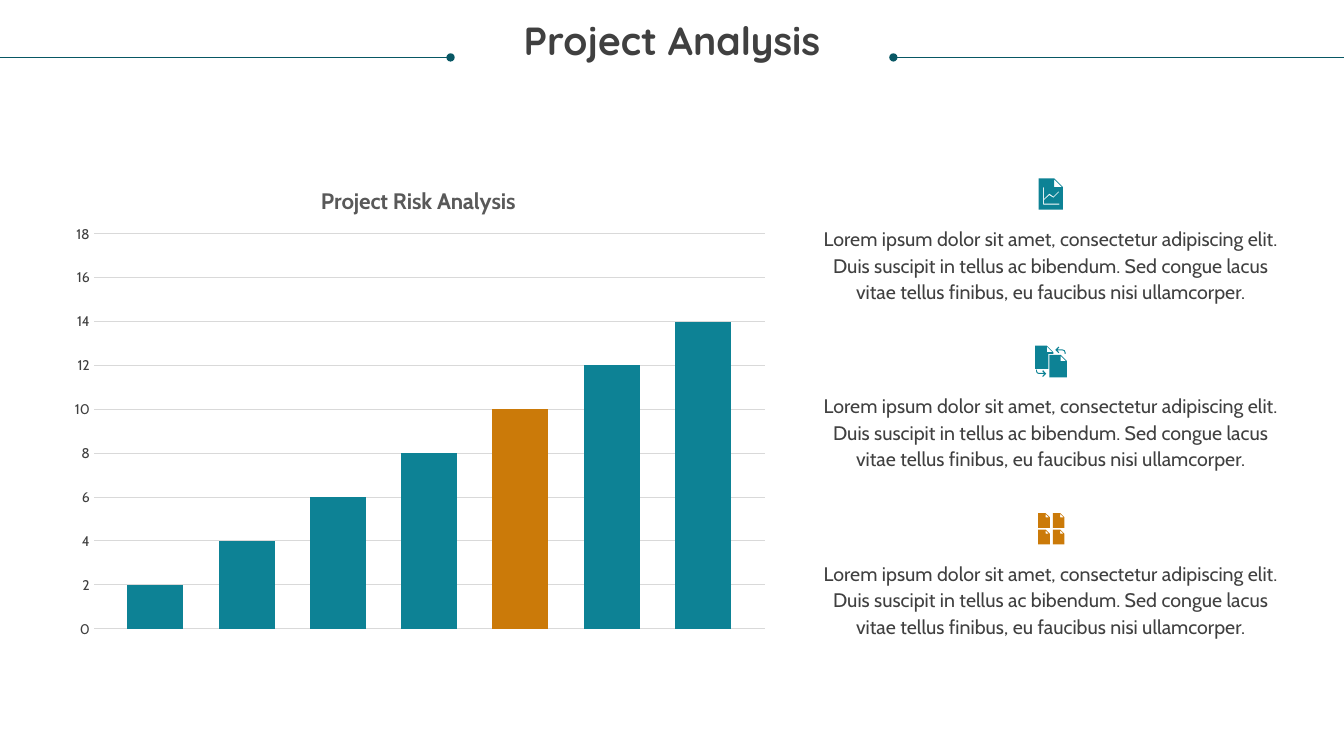
"""Build the project analysis slide with a risk chart and three illustrated notes."""
from dataclasses import dataclass

from lxml.etree import SubElement
from pptx import Presentation
from pptx.chart.data import CategoryChartData
from pptx.dml.color import RGBColor
from pptx.enum.chart import XL_CHART_TYPE, XL_TICK_MARK
from pptx.enum.shapes import MSO_CONNECTOR
from pptx.enum.text import MSO_ANCHOR, MSO_AUTO_SIZE, PP_ALIGN
from pptx.oxml.ns import qn
from pptx.util import Emu, Inches, Pt

COLUMNS, ROWS = 160, 90
CELL = Inches(1) / 12
TEAL, AMBER, NAVY = "0D8295", "CB7A09", "085764"
INK, GRAY, PALE = "404040", "595959", "D9D9D9"
BODY_FONT, HEADING_FONT = "Cabin", "Quicksand"
LOREM = (
    "Lorem ipsum dolor sit amet, consectetur adipiscing elit. Duis suscipit in tellus "
    "ac bibendum. Sed congue lacus vitae tellus finibus, eu faucibus nisi ullamcorper."
)
RULE_ROW = 6.84
NOTE_LEFT, NOTE_WIDTH, NOTE_HEIGHT = 97.08, 56.04, 9.36
FIRST_ICON_ROW, NOTE_STEP, ICON_TO_TEXT = 21.24, 19.92, 5.4
FOLD_SHARE = 0.36
RISKS = range(2, 15, 2)
HIGHLIGHTED_RISK = 10

Contour = list[tuple[float, float]]

TREND: Contour = [
    (-0.9, 1.08), (-0.78, 1.08), (-0.78, 2.4), (-0.18, 1.8), (0.3, 2.16),
    (0.9, 1.56), (1.02, 1.6), (0.3, 2.3), (-0.18, 2), (-0.78, 2.55),
    (-0.78, 3), (1.02, 3), (1.02, 3.12), (-0.9, 3.12),
]
RETURN_ARROW: Contour = [
    (0.54, 0.5), (0.92, 0.1), (1.02, 0.2), (0.78, 0.45), (1.4, 0.45),
    (1.66, 0.55), (1.76, 0.8), (1.76, 0.96), (1.64, 0.96), (1.64, 0.8),
    (1.58, 0.64), (1.4, 0.57), (0.78, 0.57), (1.02, 0.8), (0.92, 0.9),
]
FORWARD_ARROW: Contour = [(-x, 3.82 - y) for x, y in RETURN_ARROW]


@dataclass(frozen=True)
class Page:
    """A sheet with a folded corner, placed from the icon's top centre."""

    left: float
    top: float
    width: float
    height: float
    notch: tuple[float, float] = (0, 0)

    def contours(self) -> list[Contour]:
        """Return the sheet's outline and the hole of its fold."""
        right, bottom = self.left + self.width, self.top + self.height
        fold = self.width * FOLD_SHARE
        crease, hem = right - fold, self.top + fold
        across, up = self.notch
        outline = [
            (self.left, self.top), (crease, self.top), (right, hem),
            (right, bottom - up), (right - across, bottom - up),
            (right - across, bottom), (self.left, bottom),
        ]
        hole = [(crease, self.top + 0.1), (crease, hem), (right - 0.1, hem)]
        return [outline, hole]


@dataclass(frozen=True)
class Note:
    """A note's icon, given as figures made of contours, and its colour."""

    figures: list[list[Contour]]
    color: str


NOTES = [
    Note([Page(-1.44, 0, 2.88, 3.72).contours() + [TREND]], TEAL),
    Note(
        [
            Page(-1.86, 0, 2.16, 2.76, notch=(0.6, 1.8)).contours(),
            [RETURN_ARROW],
            [FORWARD_ARROW],
            Page(-0.18, 1.08, 2.1, 2.7).contours(),
        ],
        TEAL,
    ),
    Note(
        [
            Page(left, top, 1.38, 1.76).contours()
            for top in (0, 1.96)
            for left in (-1.5, 0.24)
        ],
        AMBER,
    ),
]


def cells(count: float) -> Emu:
    """Turn a count of grid cells into a length."""
    return Emu(round(count * CELL))


def rgb(code: str) -> RGBColor:
    """Turn a hex string into a colour."""
    return RGBColor.from_string(code)


def write(frame, text: str, *, size: float, font: str = BODY_FONT, color: str = INK,
          bold: bool = False, spacing=None) -> None:
    """Put one centred, formatted paragraph into a text frame."""
    paragraph = frame.paragraphs[0]
    paragraph.alignment = PP_ALIGN.CENTER
    if spacing is not None:
        paragraph.line_spacing = spacing
    run = paragraph.add_run()
    run.text = text
    run.font.size, run.font.name, run.font.bold = Pt(size), font, bold
    run.font.color.rgb = rgb(color)


def prepare(frame) -> None:
    """Make a text frame wrap from its top edge without margins."""
    frame.word_wrap = True
    frame.auto_size = MSO_AUTO_SIZE.NONE
    frame.vertical_anchor = MSO_ANCHOR.TOP
    frame.margin_left = frame.margin_right = 0
    frame.margin_top = frame.margin_bottom = 0


def add_heading(slide) -> None:
    """Place the slide title."""
    title = slide.shapes.title
    title.left, title.top = cells(3), cells(2.52)
    title.width, title.height = cells(154), cells(8.76)
    prepare(title.text_frame)
    write(title.text_frame, "Project Analysis", size=28, font=HEADING_FONT,
          bold=True, spacing=0.9)


def add_rule(slide, dot: float, edge: float) -> None:
    """Draw a thin rule from its dot to the slide's edge."""
    rule = slide.shapes.add_connector(
        MSO_CONNECTOR.STRAIGHT, cells(dot), cells(RULE_ROW), cells(edge), cells(RULE_ROW))
    rule.line.color.rgb = rgb(NAVY)
    rule.line.width = Pt(0.5)
    properties = rule.element.spPr
    SubElement(properties.find(qn("a:ln")), qn("a:headEnd"), type="oval")
    SubElement(properties, qn("a:effectLst"))


def place_plot(chart, **shares: float) -> None:
    """Fix the inner plot area by shares of the chart's size."""
    plot_area = chart.element.find(".//" + qn("c:plotArea"))
    for automatic in plot_area.findall(qn("c:layout")):
        plot_area.remove(automatic)
    layout = SubElement(plot_area, qn("c:layout"))
    plot_area.insert(0, layout)
    manual = SubElement(layout, qn("c:manualLayout"))
    settings = {"layoutTarget": "inner", "xMode": "edge", "yMode": "edge", **shares}
    for name, setting in settings.items():
        SubElement(manual, qn(f"c:{name}"), val=str(setting))


def add_risk_chart(slide) -> None:
    """Draw the risk columns with one highlighted."""
    data = CategoryChartData()
    data.categories = ["1"]
    for number, risk in enumerate(RISKS, 1):
        data.add_series(f"Series {number}", [risk])
    chart = slide.shapes.add_chart(
        XL_CHART_TYPE.COLUMN_CLUSTERED, cells(6.84), cells(19.8), cells(85.92),
        cells(57.36), data).chart
    chart.has_legend = False
    chart.font.size, chart.font.name = Pt(10), BODY_FONT
    chart.font.color.rgb = rgb(INK)
    write(chart.chart_title.text_frame, "Project Risk Analysis", size=16,
          color=GRAY, bold=True)
    chart.chart_title.include_in_layout = False
    plot = chart.plots[0]
    plot.gap_width, plot.overlap, plot.vary_by_categories = 121, -63, False
    for series, risk in zip(plot.series, RISKS):
        series.format.fill.solid()
        series.format.fill.fore_color.rgb = rgb(AMBER if risk == HIGHLIGHTED_RISK else TEAL)
    chart.category_axis.visible = False
    scale = chart.value_axis
    scale.minimum_scale, scale.maximum_scale, scale.major_unit = 0, 18, 2
    scale.major_tick_mark = scale.minor_tick_mark = XL_TICK_MARK.NONE
    scale.format.line.fill.background()
    scale.major_gridlines.format.line.color.rgb = rgb(PALE)
    scale.major_gridlines.format.line.width = Pt(0.75)
    place_plot(chart, x=0.05, y=0.14, w=0.93, h=0.82)


def add_figure(slide, contours: list[Contour], center: float, top: float, color: str) -> None:
    """Draw one filled figure of an icon."""
    placed = [[(cells(center + x), cells(top + y)) for x, y in contour] for contour in contours]
    builder = slide.shapes.build_freeform(*placed[0][0])
    for contour in placed:
        builder.move_to(*contour[0])
        builder.add_line_segments(contour[1:], close=True)
    figure = builder.convert_to_shape()
    figure.shadow.inherit = False
    figure.fill.solid()
    figure.fill.fore_color.rgb = rgb(color)
    figure.line.fill.background()


def add_note(slide, note: Note, top: float) -> None:
    """Draw a note's icon above its text."""
    for contours in note.figures:
        add_figure(slide, contours, NOTE_LEFT + NOTE_WIDTH / 2, top, note.color)
    body = slide.shapes.add_textbox(
        cells(NOTE_LEFT), cells(top + ICON_TO_TEXT), cells(NOTE_WIDTH), cells(NOTE_HEIGHT))
    prepare(body.text_frame)
    write(body.text_frame, LOREM, size=14, spacing=Pt(19))


def main() -> None:
    """Build and save the slide."""
    deck = Presentation()
    deck.slide_width, deck.slide_height = cells(COLUMNS), cells(ROWS)
    slide = deck.slides.add_slide(deck.slide_layouts[5])
    add_heading(slide)
    for dot, edge in ((53.64, 0), (106.36, COLUMNS)):
        add_rule(slide, dot, edge)
    add_risk_chart(slide)
    for position, note in enumerate(NOTES):
        add_note(slide, note, FIRST_ICON_ROW + position * NOTE_STEP)
    deck.save("out.pptx")


if __name__ == "__main__":
    main()
